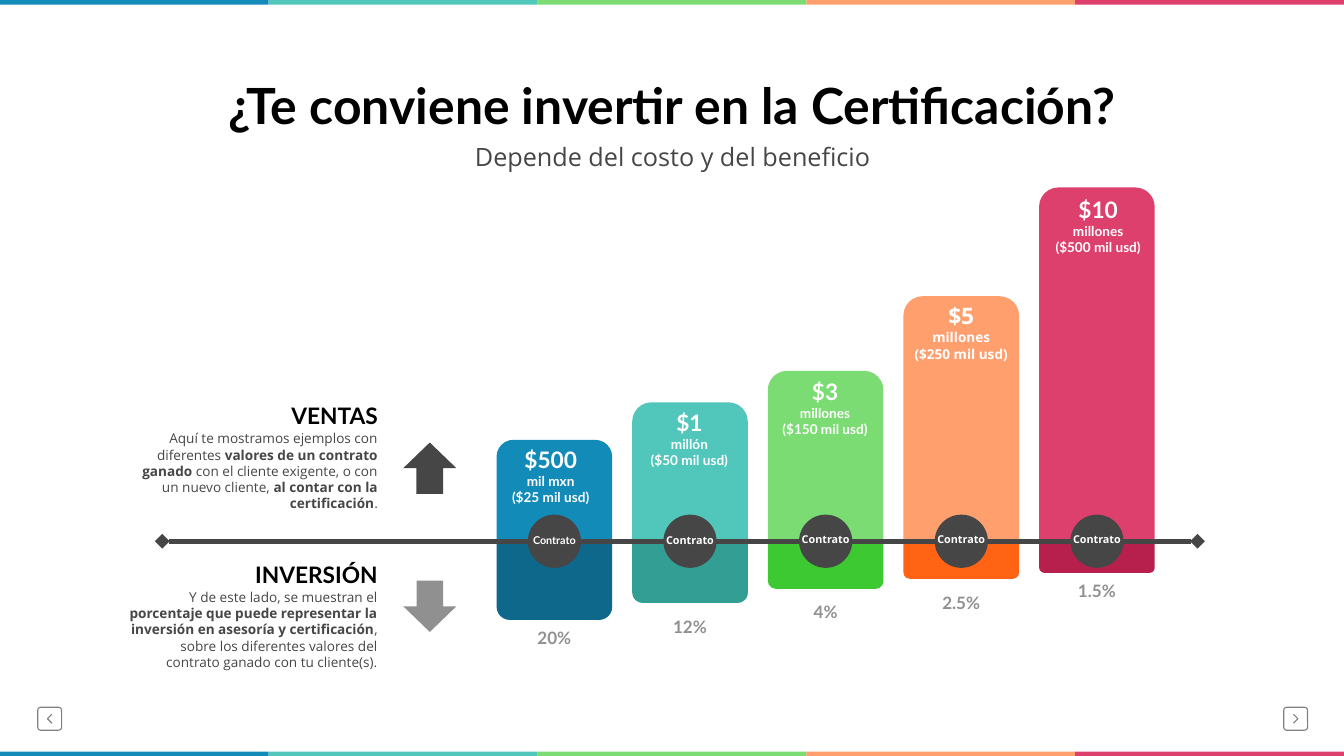
from dataclasses import dataclass
from typing import NamedTuple

import lxml.etree
import pptx
import pptx.dml.color
import pptx.enum.shapes
import pptx.enum.text
import pptx.oxml.ns
import pptx.util

Pt = pptx.util.Pt
SHAPE = pptx.enum.shapes.MSO_SHAPE
ALIGN = pptx.enum.text.PP_ALIGN
ANCHOR = pptx.enum.text.MSO_ANCHOR

COLORS = {
    "black": "000000", "white": "FFFFFF", "dark": "464646", "gray": "909090", "nav": "808080",
    "blue": "138BB9", "blue_deep": "0E688B", "teal": "51C7BB", "teal_deep": "339F94",
    "green": "7ADC72", "green_deep": "3DC932", "orange": "FF9F6E", "orange_deep": "FF6313",
    "pink": "DE406E", "pink_deep": "B7204C",
}


class Style(NamedTuple):
    color: str
    font: dict


class Run(NamedTuple):
    text: str
    style: str


class Box(NamedTuple):
    x: float
    y: float
    w: float
    h: float


def style(name: str, size: float, bold: bool, color: str) -> Style:
    return Style(color, {"name": name, "size": Pt(size), "bold": bold})


STYLES = {
    "title": style("Lato", 35.6, True, "black"),
    "subtitle": style("Open Sans", 18, False, "dark"),
    "heading": style("Lato", 16.2, True, "black"),
    "body": style("Open Sans", 9.7, False, "dark"),
    "strong": style("Open Sans", 9.7, True, "dark"),
    "percent": style("Lato", 12.2, True, "gray"),
    "amount Lato": style("Lato", 16.2, True, "white"),
    "unit Lato": style("Lato", 9.7, True, "white"),
    "contract Lato": style("Lato", 7.7, True, "white"),
    "amount Open Sans": style("Open Sans", 16.2, True, "white"),
    "unit Open Sans": style("Open Sans", 9.7, True, "white"),
    "contract Open Sans": style("Open Sans", 7.7, True, "white"),
}


@dataclass
class Contract:
    amount: str
    unit: str
    usd: str
    percent: str
    color: str
    rise: float
    drop: float
    percent_y: float
    label_dx: float = 0
    label_dy: float = 0.7
    label_font: str = "Lato"
    contract_font: str = "Open Sans"
    contract_y: float = 377.3


CONTRACTS = [
    Contract("$500", "mil mxn", "($25 mil usd)", "20%", "blue", 72.4, 56.2, 444.7, -2.6,
             contract_font="Lato", contract_y=378),
    Contract("$1", "millón", "($50 mil usd)", "12%", "teal", 99.2, 44, 437, -0.4, 1,
             contract_y=378),
    Contract("$3", "millones", "($150 mil usd)", "4%", "green", 121.7, 34, 426.2, -0.4, 1.5),
    Contract("$5", "millones", "($250 mil usd)", "2.5%", "orange", 175, 26.8, 419.8,
             label_font="Open Sans"),
    Contract("$10", "millones", "($500 mil usd)", "1.5%", "pink", 252.7, 22.6, 411.1, 0.9, 2.2),
]


@dataclass
class Note:
    heading: str
    y: float
    left: float
    right: float
    runs: list[Run]
    arrow_y: float
    arrow_color: str
    rotation: float = 0


NOTES = [
    Note("VENTAS", 283.7, 94.3, 277, [
        Run("Aquí te mostramos ejemplos con diferentes ", "body"),
        Run("valores de un contrato ganado ", "strong"),
        Run("con el cliente exigente, o con un nuevo cliente, ", "body"),
        Run("al contar con la certificación", "strong"),
        Run(".", "body"),
    ], 316.1, "dark"),
    Note("INVERSIÓN", 396.9, 85, 276.9, [
        Run("Y de este lado, se muestran el ", "body"),
        Run("porcentaje que puede representar la inversión en asesoría y certificación", "strong"),
        Run(", sobre los diferentes valores del contrato ganado con tu cliente(s).", "body"),
    ], 414.7, "gray", 180),
]

AXIS_Y = 386.6
BAR_X, BAR_STEP, BAR_W = 354.7, 96.88, 82.6
CIRCLE = 38


def rgb(name: str) -> pptx.dml.color.RGBColor:
    return pptx.dml.color.RGBColor.from_string(COLORS[name])


def add_block(s, kind, box: Box, color: str, rotation: float = 0) -> None:
    sp = s.shapes.add_shape(kind, *map(Pt, box))
    sp.shadow.inherit = False
    sp.fill.solid()
    sp.fill.fore_color.rgb = rgb(color)
    sp.line.fill.background()
    sp.rotation = rotation


def add_text(s, box: Box, lines: list[list[Run]], align=ALIGN.CENTER, wrap: bool = False,
             anchor=ANCHOR.TOP, spacing: float = 1.0) -> None:
    tf = s.shapes.add_textbox(*map(Pt, box)).text_frame
    for key, value in {"word_wrap": wrap, "vertical_anchor": anchor}.items():
        setattr(tf, key, value)
    for i, line in enumerate(lines):
        p = tf.add_paragraph() if i else tf.paragraphs[0]
        for key, value in {"alignment": align, "line_spacing": spacing}.items():
            setattr(p, key, value)
        for text, name in line:
            r = p.add_run()
            r.text = text
            for key, value in STYLES[name].font.items():
                setattr(r.font, key, value)
            r.font.color.rgb = rgb(STYLES[name].color)


def add_nav(s, x: float, direction: int) -> None:
    sp = s.shapes.add_shape(SHAPE.ROUNDED_RECTANGLE, *map(Pt, (x, 505.2, 17, 16.4)))
    sp.adjustments[0] = 0.13
    cx, cy = x + 8.5, 513.4
    fb = s.shapes.build_freeform(Pt(cx - 1.6 * direction), Pt(cy - 3.2))
    fb.add_line_segments([(Pt(cx + 1.6 * direction), Pt(cy)),
                          (Pt(cx - 1.6 * direction), Pt(cy + 3.2))], close=False)
    for outline in (sp, fb.convert_to_shape()):
        outline.shadow.inherit = False
        outline.fill.background()
        outline.line.color.rgb = rgb("nav")
        outline.line.width = Pt(0.8)


def add_axis(s) -> None:
    cxn = s.shapes.add_connector(pptx.enum.shapes.MSO_CONNECTOR.STRAIGHT,
                                 Pt(115.9), Pt(AXIS_Y), Pt(855.4), Pt(AXIS_Y))
    cxn.line.color.rgb = rgb("dark")
    cxn.line.width = Pt(3.5)
    qn = pptx.oxml.ns.qn
    sp_pr = cxn.element.spPr
    for end in ("a:headEnd", "a:tailEnd"):
        lxml.etree.SubElement(sp_pr.find(qn("a:ln")), qn(end), type="diamond")
    lxml.etree.SubElement(sp_pr, qn("a:effectLst"))


def add_bars(s, c: Contract, x: float) -> None:
    add_block(s, SHAPE.ROUND_2_SAME_RECTANGLE, Box(x, AXIS_Y, BAR_W, c.drop), f"{c.color}_deep", 180)
    add_block(s, SHAPE.ROUND_2_SAME_RECTANGLE, Box(x, AXIS_Y - c.rise, BAR_W, c.rise), c.color)


def add_labels(s, c: Contract, x: float) -> None:
    add_block(s, SHAPE.OVAL, Box(x + (BAR_W - CIRCLE) / 2, AXIS_Y - CIRCLE / 2, CIRCLE, CIRCLE), "dark")
    add_text(s, Box(x, c.contract_y, BAR_W, 16.6), [[Run("Contrato", f"contract {c.contract_font}")]])
    add_text(s, Box(x + c.label_dx, AXIS_Y - c.rise + c.label_dy, BAR_W, 50.4), [
        [Run(c.amount, f"amount {c.label_font}")],
        [Run(c.unit, f"unit {c.label_font}")],
        [Run(c.usd, f"unit {c.label_font}")],
    ])
    add_text(s, Box(x, c.percent_y, BAR_W, 22.3), [[Run(c.percent, "percent")]])


def add_note(s, n: Note) -> None:
    add_text(s, Box(n.right - 103, n.y, 103, 26.6), [[Run(n.heading, "heading")]], ALIGN.RIGHT)
    add_text(s, Box(n.left, n.y + 20.1, n.right - n.left, 72), [n.runs], ALIGN.RIGHT, wrap=True)
    add_block(s, SHAPE.UP_ARROW, Box(288, n.arrow_y, 38, 36.7), n.arrow_color, n.rotation)


def main() -> None:
    prs = pptx.Presentation()
    prs.slide_width, prs.slide_height = Pt(960), Pt(540)
    s = prs.slides.add_slide(prs.slide_layouts[6])
    add_nav(s, 27, -1)
    add_nav(s, 917, 1)
    for y in (536.9, 0):
        for i, c in enumerate(CONTRACTS):
            add_block(s, SHAPE.RECTANGLE, Box(192 * i, y, 192, 3.4), c.color)
    add_text(s, Box(144.7, 48.2, 671, 58.3), [[Run("¿Te conviene invertir en la Certificación?", "title")]],
             wrap=True, anchor=ANCHOR.MIDDLE, spacing=0.9)
    add_text(s, Box(108, 101.5, 745, 26), [[Run("Depende del costo y del beneficio", "subtitle")]],
             wrap=True, spacing=0.8)
    columns = [(c, BAR_X + BAR_STEP * i) for i, c in enumerate(CONTRACTS)]
    for c, x in columns:
        add_bars(s, c, x)
    add_axis(s)
    for n in NOTES:
        add_note(s, n)
    for c, x in columns:
        add_labels(s, c, x)
    prs.save("out.pptx")


if __name__ == "__main__":
    main()
